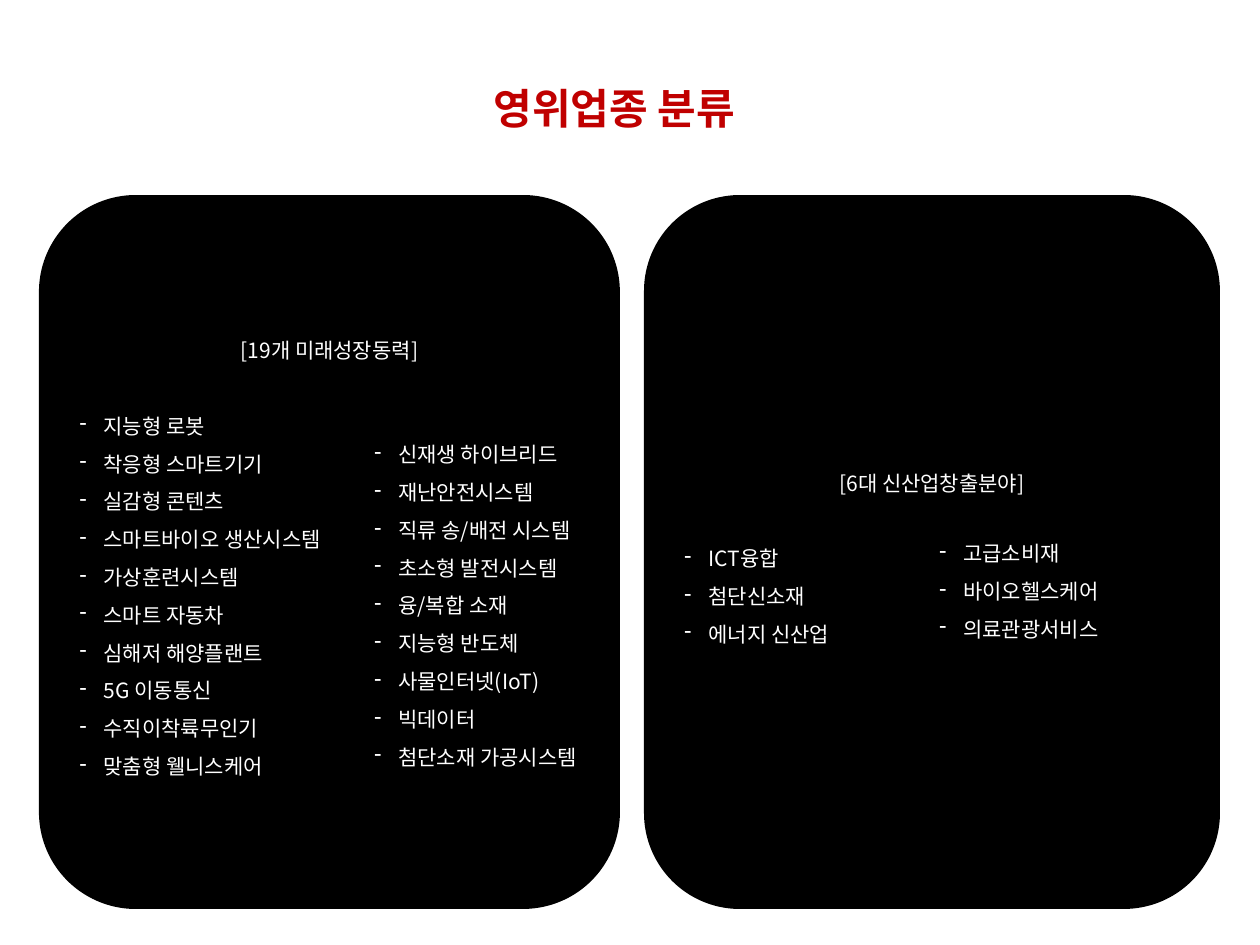
from lxml.etree import SubElement
from pptx import Presentation
from pptx.dml.color import RGBColor
from pptx.enum.shapes import MSO_SHAPE as SHAPE
from pptx.enum.text import MSO_ANCHOR as ANCHOR, MSO_AUTO_SIZE as AUTO, PP_ALIGN as ALIGN
from pptx.oxml.ns import qn
from pptx.util import Pt

PX = 914400 / 126
FONT = "Noto Sans CJK KR"
COLORS = {"title": "C00000", "panel": "000000", "text": "FFFFFF"}
INDENT = 24
LINE_SPACING = 1.5
HEADING_GAP = 21.6

PANELS = [
    {
        "box": (39, 195, 581, 714),
        "heading": "[19개 미래성장동력]",
        "items": ["지능형 로봇", "착응형 스마트기기", "실감형 콘텐츠", "스마트바이오 생산시스템",
                  "가상훈련시스템", "스마트 자동차", "심해저 해양플랜트", "5G 이동통신",
                  "수직이착륙무인기", "맞춤형 웰니스케어"],
        "side_box": (323, 228, 252, 357),
        "side_items": ["신재생 하이브리드", "재난안전시스템", "직류 송/배전 시스템",
                       "초소형 발전시스템", "융/복합 소재", "지능형 반도체",
                       "사물인터넷(IoT)", "빅데이터", "첨단소재 가공시스템"],
    },
    {
        "box": (644, 195, 576, 714),
        "heading": "[6대 신산업창출분야]",
        "items": ["ICT융합", "첨단신소재", "에너지 신산업"],
        "side_box": (283, 327, 268, 127),
        "side_items": ["고급소비재", "바이오헬스케어", "의료관광서비스"],
    },
]


def emu(*lengths):
    """Turn px lengths into a list of EMU."""
    return [round(n * PX) for n in lengths]


def style_runs(p, size, color, bold=False):
    """Give every run of a paragraph its font."""
    for r in p.runs:
        r.font.size = Pt(size)
        r.font.name = FONT
        r.font.bold = bold
        r.font.color.rgb = RGBColor.from_string(COLORS[color])
        SubElement(r._r.get_or_add_rPr(), qn("a:ea"), typeface=FONT)


def add_dash(p):
    """Turn a paragraph into a dashed list item with a hanging indent."""
    pPr = p._p.get_or_add_pPr()
    indent, = emu(INDENT)
    pPr.set("marL", str(indent))
    pPr.set("indent", str(-indent))
    SubElement(pPr, qn("a:buFontTx"))
    SubElement(pPr, qn("a:buChar"), char="-")


def fill_list(tf, items, heading=None):
    """Write a dashed list, below a centred heading if there is one."""
    tf.word_wrap = True
    tf.text = "\n".join(([heading] if heading else []) + items)
    for i, p in enumerate(tf.paragraphs):
        p.line_spacing = LINE_SPACING
        if heading and i == 0:
            p.alignment = ALIGN.CENTER
            p.space_after = Pt(HEADING_GAP)
        else:
            p.alignment = ALIGN.LEFT
            add_dash(p)
        style_runs(p, 12, "text")


def add_title(s, box, text):
    """Place the centred slide title."""
    tf = s.shapes.add_textbox(*emu(*box)).text_frame
    tf.word_wrap = True
    tf.auto_size = AUTO.SHAPE_TO_FIT_TEXT
    tf.text = text
    p = tf.paragraphs[0]
    p.alignment = ALIGN.CENTER
    style_runs(p, 24, "title", bold=True)


def add_panel(s, box, heading, items, side_box, side_items):
    """Place a rounded panel with its list and a second column inside."""
    x, y, w, h = box
    group = s.shapes.add_group_shape()
    panel = group.shapes.add_shape(SHAPE.ROUNDED_RECTANGLE, *emu(x, y, w, h))
    panel.shadow.inherit = False
    panel.fill.solid()
    panel.fill.fore_color.rgb = RGBColor.from_string(COLORS["panel"])
    panel.line.fill.background()
    panel.text_frame.vertical_anchor = ANCHOR.MIDDLE
    fill_list(panel.text_frame, items, heading)

    dx, dy, side_w, side_h = side_box
    side = group.shapes.add_textbox(*emu(x + dx, y + dy, side_w, side_h))
    side.text_frame.auto_size = AUTO.SHAPE_TO_FIT_TEXT
    fill_list(side.text_frame, side_items)


def main():
    """Build the slide and save it."""
    prs = Presentation()
    prs.slide_width, prs.slide_height = emu(1260, 945)
    s = prs.slides.add_slide(prs.slide_layouts[6])
    add_title(s, (282, 76, 674, 63), "영위업종 분류 ")
    for panel in PANELS:
        add_panel(s, **panel)
    prs.save("out.pptx")


if __name__ == "__main__":
    main()
